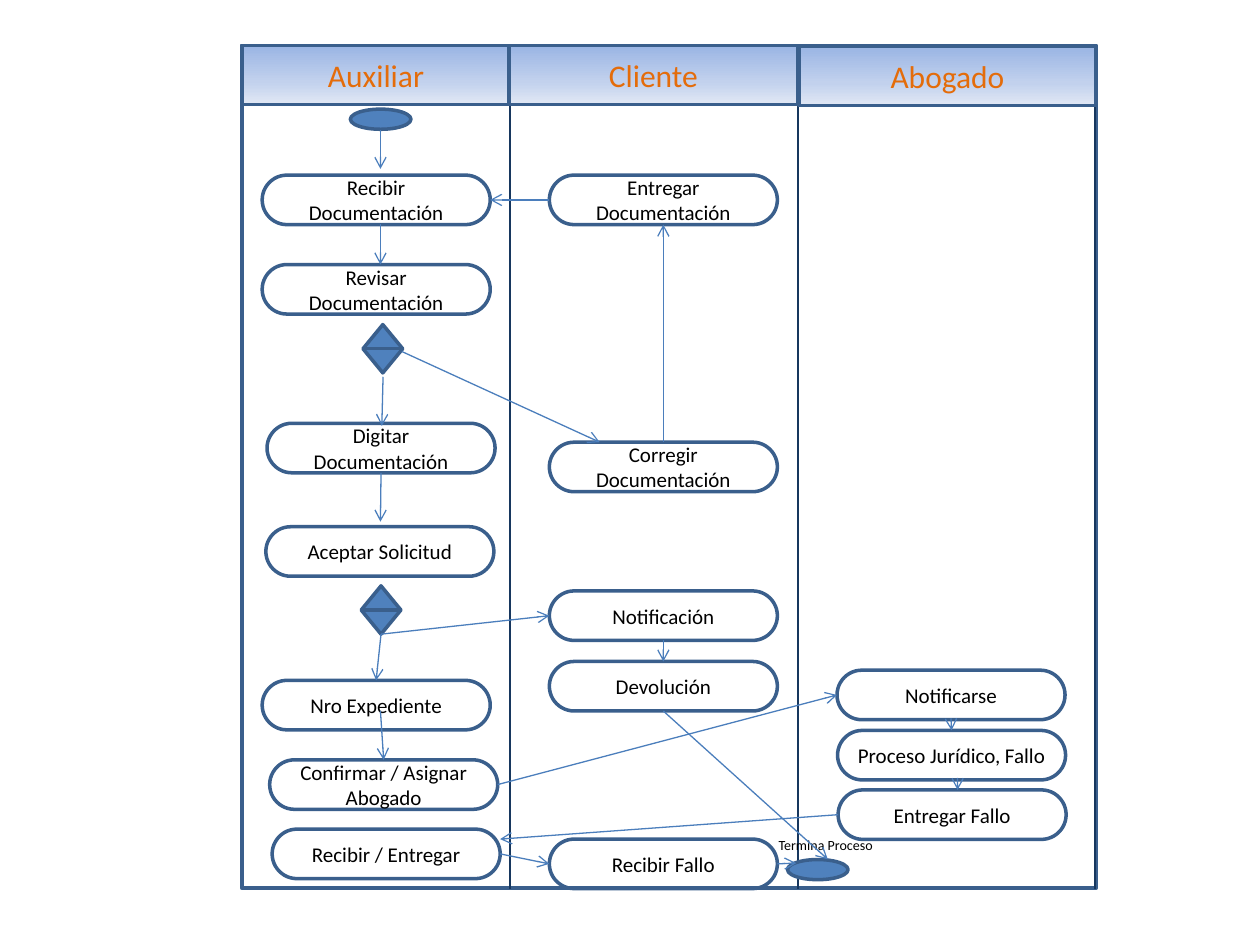
import copy

import pptx
import pptx.dml.color
import pptx.enum.shapes
import pptx.enum.text
import pptx.oxml.ns
import pptx.util
from lxml import etree

Pt = pptx.util.Pt
RGB = pptx.dml.color.RGBColor
KIND = pptx.enum.shapes.MSO_SHAPE
qn = pptx.oxml.ns.qn

EDGE = RGB(0x3A, 0x5F, 0x8C)
LANE = RGB(0x17, 0x37, 0x5E)
ARROW = RGB(0x4B, 0x7E, 0xBC)
BLUE = RGB(0x4F, 0x81, 0xBD)
ORANGE = RGB(0xE4, 0x6C, 0x0A)
BLACK = RGB(0, 0, 0)
FADE = [
    (0, RGB(0x9A, 0xB5, 0xE4)),
    (0.62, RGB(0xC2, 0xD1, 0xED)),
    (1, RGB(0xE1, 0xE8, 0xF5)),
]

TOP, LEFT, BOTTOM, RIGHT = range(4)
BOX_W, BOX_H = 130.3, 28.3
FRAME = (138.2, 25.9, 488.2, 481.7)
HEADS = [
    ("Auxiliar", 138.2, 25.9, 153.4),
    ("Cliente", 290.9, 25.9, 164.9),
    ("Abogado", 456.5, 26.6, 169.9),
]
CLIENT = 313.9
STEPS = [
    ("Recibir Documentación", 149.8, 100.1),
    ("Revisar Documentación", 149.8, 151.2),
    ("Digitar Documentación", 152.6, 241.9),
    ("Aceptar Solicitud", 151.9, 301),
    ("Nro Expediente", 149.8, 388.8),
    ("Confirmar / Asignar Abogado", 154.1, 434.2),
    ("Recibir / Entregar", 155.5, 473.8),
    ("Entregar Documentación", CLIENT, 100.1),
    ("Corregir Documentación", CLIENT, 252.7),
    ("Notificación", CLIENT, 337.7),
    ("Devolución", CLIENT, 378),
    ("Recibir Fallo", CLIENT, 479.5),
    ("Notificarse", 478.3, 383),
    ("Proceso Jurídico, Fallo", 478.6, 417.4),
    ("Entregar Fallo", 478.9, 451.4),
]
SORTS = [("Sort 1", 207.4, 185.5), ("Sort 2", 206.4, 334.8)]
ENDS = [(200.2, 62.4), (450, 491.2)]
FLOWS = [
    ((217.4, 74.2), (217.4, 96.5)),
    ((217.4, 128.2), (217.4, 151.2)),
    ((218.9, 215.3), (218.2, 243.4)),
    ((229.7, 200.9), (342.7, 252.7)),
    (("Entregar Documentación", LEFT), ("Recibir Documentación", RIGHT)),
    (("Corregir Documentación", TOP), ("Entregar Documentación", BOTTOM)),
    (("Digitar Documentación", BOTTOM), (217.4, 298.1)),
    (("Notificación", BOTTOM), ("Devolución", TOP)),
    (("Sort 2", BOTTOM), ("Notificación", LEFT)),
    (("Sort 2", BOTTOM), ("Nro Expediente", TOP)),
    ((217.4, 406.1), ("Confirmar / Asignar Abogado", TOP)),
    (("Confirmar / Asignar Abogado", RIGHT), ("Notificarse", LEFT)),
    (("Notificarse", BOTTOM), ("Proceso Jurídico, Fallo", TOP)),
    ((547.2, 445.7), (547.2, 451.4)),
    (("Recibir / Entregar", RIGHT), ("Recibir Fallo", LEFT)),
    (("Devolución", BOTTOM), (473, 491)),
    (("Recibir Fallo", RIGHT), (455, 493.2)),
    (("Entregar Fallo", LEFT), (285.8, 479.5)),
]


def write(shape, text, size=12, color=BLACK, align=pptx.enum.text.PP_ALIGN.CENTER):
    """Put formatted text into a shape."""
    para = shape.text_frame.paragraphs[0]
    para.alignment = align
    run = para.add_run()
    run.text = text
    run.font.name = "Calibri"
    run.font.size = Pt(size)
    run.font.color.rgb = color


def draw(slide, kind, x, y, w, h, fill=None):
    """Add an outlined shape, filled or hollow."""
    shape = slide.shapes.add_shape(kind, Pt(x), Pt(y), Pt(w), Pt(h))
    shape.shadow.inherit = False
    shape.line.color.rgb = EDGE
    shape.line.width = Pt(2)
    if fill is None:
        shape.fill.background()
    else:
        shape.fill.solid()
        shape.fill.fore_color.rgb = fill
    return shape


def head(slide, text, x, y, w):
    """Add a lane header with a three-stop fade."""
    shape = draw(slide, KIND.RECTANGLE, x, y, w, 33.8)
    shape.fill.gradient()
    shape.fill.gradient_angle = 270
    stops = shape._element.spPr.find(".//" + qn("a:gsLst"))
    stops.append(copy.deepcopy(stops[-1]))
    for stop, (place, color) in zip(shape.fill.gradient_stops, FADE):
        stop.position = place
        stop.color.rgb = color
    write(shape, text, size=18, color=ORANGE)


def step(slide, text, x, y):
    """Add a hollow pill with its label."""
    shape = draw(slide, KIND.ROUNDED_RECTANGLE, x, y, BOX_W, BOX_H)
    shape.adjustments[0] = 0.5
    write(shape, text)
    return shape


def line(slide, start, end, color, width):
    """Add a straight line without a shadow."""
    link = slide.shapes.add_connector(
        pptx.enum.shapes.MSO_CONNECTOR.STRAIGHT, *map(Pt, start + end)
    )
    link.line.color.rgb = color
    link.line.width = Pt(width)
    etree.SubElement(link._element.spPr, qn("a:effectLst"))
    return link


def flow(slide, nodes, start, end):
    """Add an arrow between points or sides of nodes."""
    spots = [(0, 0) if spot[0] in nodes else spot for spot in (start, end)]
    link = line(slide, *spots, ARROW, 0.75)
    etree.SubElement(link.line._get_or_add_ln(), qn("a:tailEnd"), type="arrow")
    for spot, join in ((start, link.begin_connect), (end, link.end_connect)):
        if spot[0] in nodes:
            join(nodes[spot[0]], spot[1])


def note(slide, text, x, y, w, h):
    """Add a small label that does not wrap."""
    box = slide.shapes.add_textbox(Pt(x), Pt(y), Pt(w), Pt(h))
    box.text_frame.word_wrap = False
    box.text_frame.auto_size = pptx.enum.text.MSO_AUTO_SIZE.SHAPE_TO_FIT_TEXT
    write(box, text, size=8, align=pptx.enum.text.PP_ALIGN.LEFT)


def main():
    """Build the swimlane slide."""
    deck = pptx.Presentation()
    deck.slide_width, deck.slide_height = Pt(720), Pt(540)
    slide = deck.slides.add_slide(deck.slide_layouts[6])
    draw(slide, KIND.RECTANGLE, *FRAME)
    for x in (291.6, 455.8, 625.7):
        line(slide, (x, 25.9), (x, 508.3), LANE, 1.25)
    for item in HEADS:
        head(slide, *item)
    nodes = {text: step(slide, text, x, y) for text, x, y in STEPS}
    for name, x, y in SORTS:
        nodes[name] = draw(slide, KIND.FLOWCHART_SORT, x, y, 22.7, 27.6, BLUE)
    for x, y in ENDS:
        draw(slide, KIND.OVAL, x, y, 34.6, 11.5, BLUE)
    note(slide, "Termina Proceso", 437.8, 474.5, 69.8, 17.3)
    for start, end in FLOWS:
        flow(slide, nodes, start, end)
    deck.save("out.pptx")


if __name__ == "__main__":
    main()
